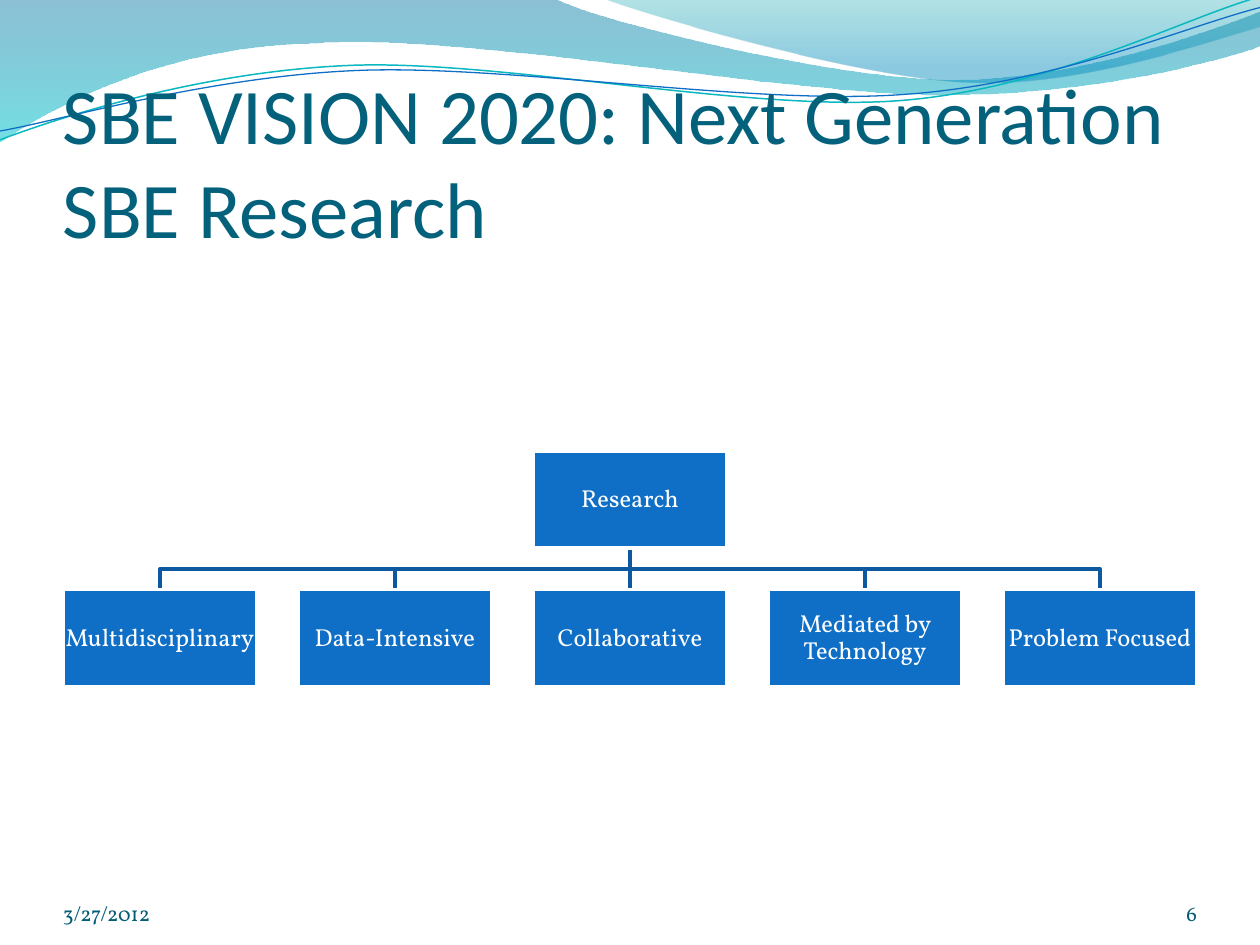
from lxml.etree import SubElement
from pptx import Presentation
from pptx.dml.color import RGBColor
from pptx.enum.shapes import MSO_SHAPE
from pptx.enum.text import MSO_ANCHOR as ANCHOR, PP_ALIGN as ALIGN
from pptx.oxml.ns import qn
from pptx.util import Inches, Pt

# Content
TITLE = "SBE VISION 2020: Next Generation SBE Research"
ROOT = "Research"
BRANCHES = ["Multidisciplinary", "Data-Intensive", "Collaborative",
            "Mediated by Technology", "Problem Focused"]
DATE, NUMBER = "3/27/2012", "6"
HEAD_FONT, BODY_FONT = "Calibri", "Vollkorn"

# Waves: a 2-tuple is a straight step, a 6-tuple a Bezier step (two controls, end)
BANDS = [
    ([(0, 0), (4.4, -0.01), (4.76, 0.17, 6.64, 0.63, 7.58, 0.63),
      (8.53, 0.63, 9.58, 0.26, 10, 0.09), (10.01, 0.36),
      (9.83, 0.44, 8.7, 0.76, 7.46, 0.75), (6.22, 0.75, 3.82, 0.28, 2.57, 0.34),
      (1.29, 0.36, 0.46, 0.83, -0.01, 1.13)],
     [(0, "0074A1", 45), (1, "00C6CF", 55)]),
    ([(4.79, -0.01), (5.09, 0.11, 6.82, 0.62, 7.69, 0.65),
      (8.56, 0.69, 9.61, 0.32, 10, 0.21), (10, 0)],
     [(0, "00A1A9", 30), (0.8, "008BBF", 45)]),
]
STRANDS = [
    ([(0, 1.11), (0.48, 0.93, 1.58, 0.57, 2.77, 0.52),
      (3.95, 0.47, 5.93, 0.89, 7.13, 0.8), (8.33, 0.71, 9.38, 0.15, 9.98, -0.02)],
     "0AB8BF", 0.85),
    ([(0, 1.04), (0.47, 0.96, 1.64, 0.61, 2.83, 0.56),
      (4.03, 0.51, 5.97, 0.84, 7.17, 0.75), (8.36, 0.67, 9.41, 0.21, 10, 0.06)],
     "0F6FC6", 0.75),
]

# Chart layout
MARGIN, SLIDE_W = 0.5, 10
BOX_W, BOX_H = 1.54, 0.77
ROOT_TOP, BRANCH_TOP = 3.58, 4.68

prs = Presentation()
prs.slide_width, prs.slide_height = Inches(SLIDE_W), Inches(7.5)
s = prs.slides.add_slide(prs.slide_layouts[6])


def rgb(value):
    return RGBColor.from_string(value)


def add_outline(steps, closed):
    ends = [(Inches(step[-2]), Inches(step[-1])) for step in steps]
    builder = s.shapes.build_freeform(*ends[0])
    builder.add_line_segments(ends[1:], close=closed)
    sp = builder.convert_to_shape()
    sp.shadow.inherit = False
    # Turn the Bezier steps from straight segments into true curves
    segments = list(sp._element.spPr.iter(qn("a:lnTo")))
    for segment, step in zip(segments, steps[1:]):
        if len(step) == 6:
            segment.tag = qn("a:cubicBezTo")
            for i in (0, 2):
                pt = SubElement(segment, qn("a:pt"))
                pt.set("x", str(Inches(step[i]) - sp.left))
                pt.set("y", str(Inches(step[i + 1]) - sp.top))
            segment.append(segment[0])
    return sp


def add_band(steps, stops):
    sp = add_outline(steps, True)
    sp.line.fill.background()
    sp.fill.gradient()
    sp.fill.gradient_angle = 270
    for stop, (position, color, _) in zip(sp.fill.gradient_stops, stops):
        stop.position = position
        stop.color.rgb = rgb(color)
    for clr, (_, _, alpha) in zip(sp._element.spPr.iter(qn("a:srgbClr")), stops):
        SubElement(clr, qn("a:alpha")).set("val", str(alpha * 1000))


def add_path(steps, color, width):
    sp = add_outline(steps, False)
    sp.fill.background()
    sp.line.color.rgb = rgb(color)
    sp.line.width = Pt(width)


def write(sp, text, size, font, color, align, anchor, insets=(0, 0, 0, 0)):
    tf = sp.text_frame
    tf.word_wrap = True
    tf.vertical_anchor = anchor
    tf.margin_left, tf.margin_top, tf.margin_right, tf.margin_bottom = map(Inches, insets)
    p = tf.paragraphs[0]
    p.alignment = align
    r = p.add_run()
    r.text = text
    r.font.size, r.font.name = Pt(size), font
    r.font.color.rgb = rgb(color)
    return p


def add_text(box, *args):
    write(s.shapes.add_textbox(*map(Inches, box)), *args)


def add_box(center, top, text):
    sp = s.shapes.add_shape(MSO_SHAPE.RECTANGLE, Inches(center - BOX_W / 2), Inches(top),
                            Inches(BOX_W), Inches(BOX_H))
    sp.shadow.inherit = False
    sp.fill.solid()
    sp.fill.fore_color.rgb = rgb("0F6FC6")
    sp.line.color.rgb = rgb("FFFFFF")
    sp.line.width = Pt(2)
    p = write(sp, text, 14, BODY_FONT, "FFFFFF", ALIGN.CENTER, ANCHOR.MIDDLE, (0.01,) * 4)
    p.line_spacing = 0.9


# Wave header
for steps, stops in BANDS:
    add_band(steps, stops)
for steps, color, width in STRANDS:
    add_path(steps, color, width)

# Title
add_text((MARGIN, 0.77, 9, 1.25), TITLE, 45, HEAD_FONT, "04617B",
         ALIGN.LEFT, ANCHOR.BOTTOM, (0, 0.05, 0, 0))

# Tree: links first, boxes on top; the middle link needs no bend
mid = SLIDE_W / 2
root_bottom = ROOT_TOP + BOX_H
bus = (root_bottom + BRANCH_TOP) / 2
pitch = (SLIDE_W - 2 * MARGIN - BOX_W) / (len(BRANCHES) - 1)
centers = [mid + (i - (len(BRANCHES) - 1) / 2) * pitch for i in range(len(BRANCHES))]
for x in reversed(centers):
    bend = [] if x == mid else [(mid, bus), (x, bus)]
    add_path([(mid, root_bottom), *bend, (x, BRANCH_TOP)], "0C599F", 2)
add_box(mid, ROOT_TOP, ROOT)
for x, label in zip(centers, BRANCHES):
    add_box(x, BRANCH_TOP, label)

# Footer
for left, width, text, align in [(MARGIN, 2.33, DATE, ALIGN.LEFT),
                                 (8.67, 0.83, NUMBER, ALIGN.RIGHT)]:
    add_text((left, 6.95, width, 0.4), text, 12, BODY_FONT, "045D75", align, ANCHOR.BOTTOM)

prs.save("out.pptx")
